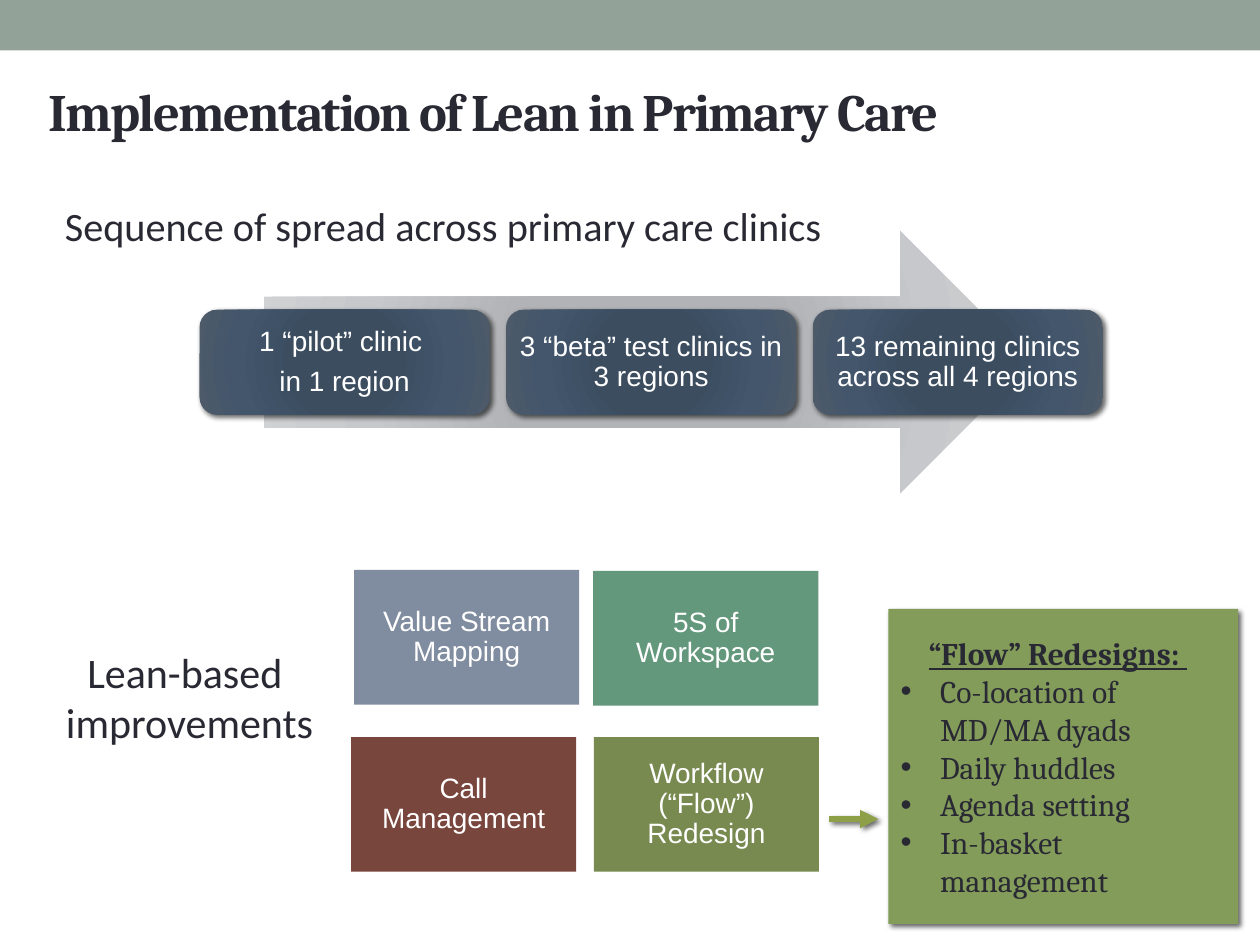
from lxml import etree
from pptx import Presentation
from pptx.dml.color import RGBColor
from pptx.enum.shapes import MSO_CONNECTOR, MSO_SHAPE
from pptx.enum.text import MSO_ANCHOR, PP_ALIGN
from pptx.oxml import parse_xml
from pptx.oxml.ns import nsdecls, qn
from pptx.util import Pt

RECTANGLE = MSO_SHAPE.RECTANGLE
ROUNDED = MSO_SHAPE.ROUNDED_RECTANGLE
RIGHT_ARROW = MSO_SHAPE.RIGHT_ARROW
STRAIGHT = MSO_CONNECTOR.STRAIGHT
MIDDLE, TOP = MSO_ANCHOR.MIDDLE, MSO_ANCHOR.TOP
CENTER, LEFT = PP_ALIGN.CENTER, PP_ALIGN.LEFT

COLORS = {
    "band": "93A299", "ink": "292934", "white": "FFFFFF",
    "flow": "839C5A", "link": "8DA048", "slate": "808DA0",
    "green": "64987C", "brick": "79463D", "olive": "788A50",
}
ARROW_STOPS = [(0, "B1B3B6"), (34, "B1B3B6"), (70, "C6C8CB"), (100, "D0D2D4")]
STAGE_STOPS = [(0, "3B4D61"), (34, "3C4D60"), (70, "43566B"), (100, "4C5A6A")]

TITLE = "Implementation of Lean in Primary Care"
SUBTITLE = "Sequence of spread across primary care clinics"
SIDE_LABEL = ["Lean-based ", "improvements"]
STAGES = [
    ["1 “pilot” clinic ", "in 1 region"],
    ["3 “beta” test clinics in 3 regions"],
    ["13 remaining clinics across all 4 regions"],
]
IMPROVEMENTS = [
    ("Value Stream Mapping", "slate", 202.3, 325.7),
    ("5S of Workspace", "green", 339, 326.2),
    ("Workflow (“Flow”) Redesign", "olive", 339.4, 421.2),
    ("Call Management", "brick", 200.6, 421.2),
]
FLOW_HEADING = "“Flow” Redesigns:"
FLOW_ITEMS = ["Co-location of MD/MA dyads", "Daily huddles",
              "Agenda setting", "In-basket management"]

STAGE_LEFT, STAGE_TOP, STAGE_STEP = 114, 177, 175.2
STAGE_WIDTH, STAGE_HEIGHT = 165.8, 60
TILE_WIDTH, TILE_HEIGHT = 128.6, 77


def rgb(name):
    return RGBColor.from_string(COLORS[name])


def add_effects(item, shadowed):
    properties = item._element.spPr
    effects = etree.SubElement(properties, qn("a:effectLst"))
    if shadowed:
        effects.append(parse_xml(
            f'<a:outerShdw {nsdecls("a")} blurRad="{Pt(3)}" dist="{Pt(2)}" '
            'dir="2700000" rotWithShape="0"><a:srgbClr val="000000">'
            '<a:alpha val="60000"/></a:srgbClr></a:outerShdw>'))


def add_block(page, kind, frame, color=None, stops=None, shadowed=False):
    box = page.shapes.add_shape(kind, *map(Pt, frame))
    box.line.fill.background()
    if stops:
        marks = "".join(
            f'<a:gs pos="{place * 1000}"><a:srgbClr val="{shade}"/></a:gs>'
            for place, shade in stops)
        gradient = parse_xml(
            f'<a:gradFill {nsdecls("a")} rotWithShape="1"><a:gsLst>{marks}</a:gsLst>'
            '<a:path path="circle"><a:fillToRect l="100000" t="100000" '
            'r="100000" b="100000"/></a:path></a:gradFill>')
        box._element.spPr.find(qn("a:prstGeom")).addnext(gradient)
    else:
        box.fill.solid()
        box.fill.fore_color.rgb = rgb(color)
    add_effects(box, shadowed)
    return box


def add_span(para, text, size, font, color="ink", bold=False, underline=False):
    span = para.add_run()
    span.text = text
    span.font.size, span.font.name = Pt(size), font
    span.font.color.rgb = rgb(color)
    span.font.bold, span.font.underline = bold, underline
    return span


def next_para(box, index, align):
    frame = box.text_frame
    para = frame.add_paragraph() if index else frame.paragraphs[0]
    para.alignment = align
    return para


def add_label(page, frame, lines, size, font, align=CENTER, anchor=TOP, bold=False):
    box = page.shapes.add_textbox(*map(Pt, frame))
    box.text_frame.word_wrap = True
    box.text_frame.vertical_anchor = anchor
    for index, line in enumerate(lines):
        add_span(next_para(box, index, align), line, size, font, bold=bold)
    return box


def fill_block(box, lines):
    frame = box.text_frame
    frame.vertical_anchor = MIDDLE
    frame.margin_left = frame.margin_right = Pt(5)
    frame.margin_top = frame.margin_bottom = Pt(5)
    for index, line in enumerate(lines):
        para = next_para(box, index, CENTER)
        para.line_spacing, para.space_after = 0.9, Pt(5.6)
        add_span(para, line, 16, "Arial", "white")


def add_flow_panel(page):
    panel = add_block(page, RECTANGLE, (507.6, 348, 200, 180), "flow", shadowed=True)
    panel.text_frame.vertical_anchor = MIDDLE
    heading = next_para(panel, 0, LEFT)
    heading._p.get_or_add_pPr().set("marL", str(Pt(16)))
    add_span(heading, FLOW_HEADING, 18, "Cambria", bold=True, underline=True)
    add_span(heading, " ", 18, "Cambria", underline=True)
    for index, item in enumerate(FLOW_ITEMS, 1):
        para = next_para(panel, index, LEFT)
        layout = para._p.get_or_add_pPr()
        layout.set("marL", str(Pt(22.5)))
        layout.set("indent", str(Pt(-22.5)))
        etree.SubElement(layout, qn("a:buFont")).set("typeface", "Arial")
        etree.SubElement(layout, qn("a:buChar")).set("char", "•")
        add_span(para, item, 18, "Cambria")


def add_flow_link(page):
    link = page.shapes.add_connector(STRAIGHT, Pt(474), Pt(468), Pt(502), Pt(468))
    link.line.width = Pt(3.5)
    link.line.color.rgb = rgb("link")
    etree.SubElement(link.line._get_or_add_ln(), qn("a:tailEnd")).set("type", "triangle")
    add_effects(link, True)


def main():
    deck = Presentation()
    deck.slide_width, deck.slide_height = Pt(720), Pt(540)
    page = deck.slides.add_slide(deck.slide_layouts[6])

    add_block(page, RECTANGLE, (0, 0, 720, 28.8), "band")
    add_block(page, RIGHT_ARROW, (150.8, 132, 438.5, 150), stops=ARROW_STOPS)
    for index, lines in enumerate(STAGES):
        frame = (STAGE_LEFT + index * STAGE_STEP, STAGE_TOP, STAGE_WIDTH, STAGE_HEIGHT)
        fill_block(add_block(page, ROUNDED, frame, stops=STAGE_STOPS, shadowed=True), lines)

    subtitle = add_label(page, (12, 111.6, 614, 44), [SUBTITLE], 23, "Calibri", LEFT)
    intro = subtitle.text_frame.paragraphs[0]
    intro._p.get_or_add_pPr().set("marL", str(Pt(18)))
    intro.space_before = Pt(4.6)
    title = add_label(page, (0, 24.5, 564, 77), [TITLE], 30, "Cambria",
                      anchor=MIDDLE, bold=True)
    title.text_frame.paragraphs[0].runs[0].font._element.set("spc", "-100")
    add_label(page, (0, 365.8, 216.7, 65.5), SIDE_LABEL, 24, "Calibri")

    add_flow_panel(page)
    for text, color, left, top in IMPROVEMENTS:
        tile = add_block(page, RECTANGLE, (left, top, TILE_WIDTH, TILE_HEIGHT), color)
        fill_block(tile, [text])
    add_flow_link(page)
    deck.save("out.pptx")


if __name__ == "__main__":
    main()
